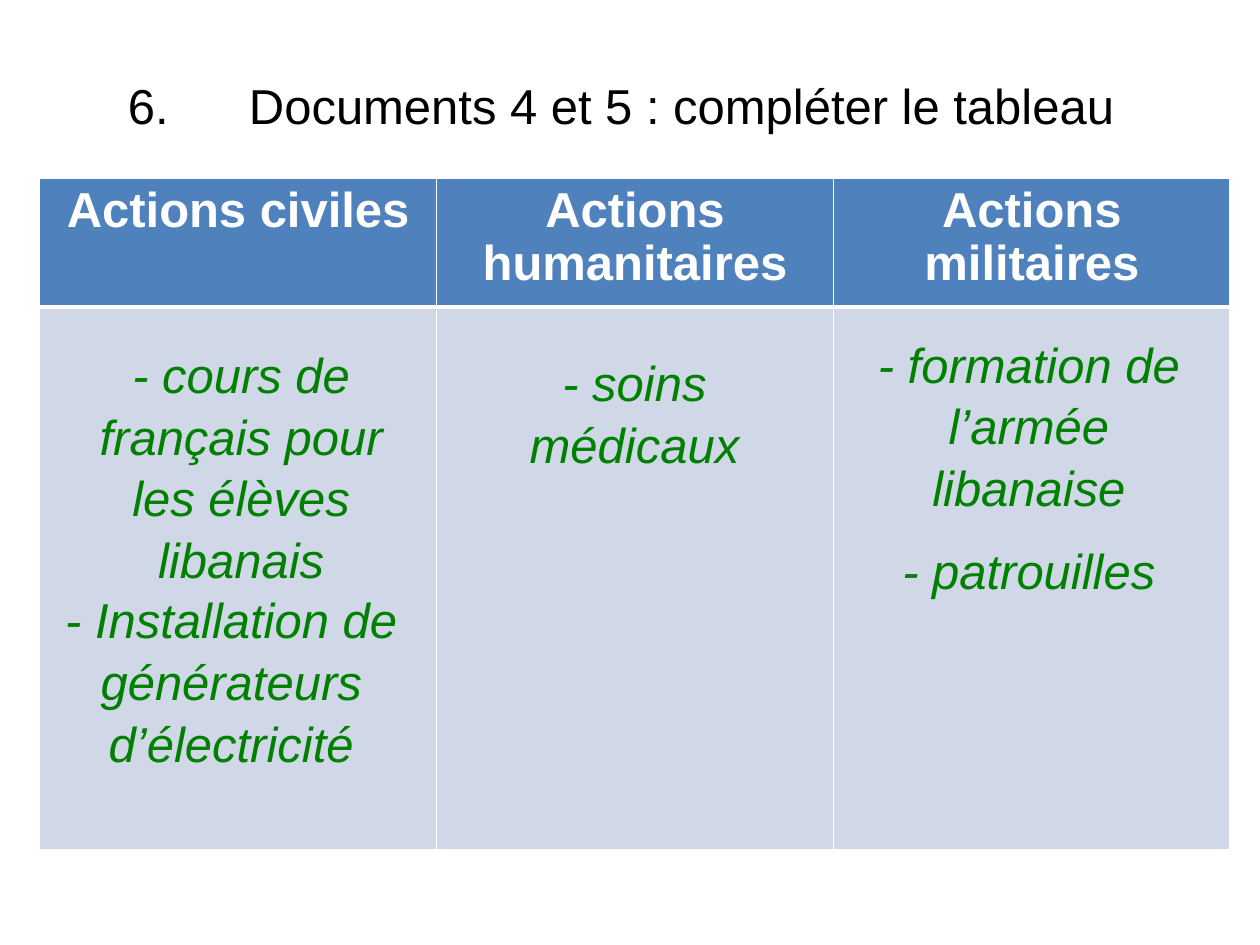
from lxml import etree
from pptx import Presentation
from pptx.dml.color import RGBColor
from pptx.enum.text import MSO_ANCHOR, PP_ALIGN
from pptx.oxml.ns import qn
from pptx.util import Cm, Pt

CENTER, LEFT = PP_ALIGN.CENTER, PP_ALIGN.LEFT
TOP = MSO_ANCHOR.TOP
BLANK_LAYOUT = 6

TITLE_FORMAT = {"name": "Arial", "size": Pt(28)}
HEADER_FORMAT = {**TITLE_FORMAT, "bold": True}
ANSWER_FORMAT = {**TITLE_FORMAT, "bold": False, "italic": True}

HEADERS = ["Actions civiles", "Actions humanitaires", "Actions militaires"]
ANSWERS = [  # text, left, top, height in cm
    ("- cours de français pour les élèves libanais", 1.19, 6.76, 3.84),
    ("- Installation de générateurs d’électricité", 0.99, 11.71, 3.84),
    ("- soins médicaux", 9.12, 6.93, 1.45),
    ("- formation de l’armée libanaise", 17.07, 6.55, 2.64),
    ("- patrouilles", 17.07, 10.72, 1.45),
]


def color(value):
    return RGBColor.from_string(value)


class SlideBuilder:
    black, white, green = "000000", "FFFFFF", "008000"
    header_fill, body_fill = "4F81BD", "D0D8E8"

    def __init__(self, slide):
        self.slide = slide

    def add_text(self, paragraph, text, formats, text_color, align=CENTER, spacing=1.0):
        paragraph.alignment = align
        paragraph.line_spacing = spacing
        run = paragraph.add_run()
        run.text = text
        for attribute, value in formats.items():
            setattr(run.font, attribute, value)
        run.font.color.rgb = color(text_color)

    def text_box(self, left, top, width, height):
        shape = self.slide.shapes.add_textbox(Cm(left), Cm(top), Cm(width), Cm(height))
        shape.text_frame.word_wrap = True
        return shape.text_frame.paragraphs[0]

    def title(self, text):
        paragraph = self.text_box(0, 1.4, 25.4, 1.45)
        # The hanging indent places the wording after the number
        properties = paragraph._p.get_or_add_pPr()
        properties.set("marL", str(Cm(4.77)))
        properties.set("indent", str(Cm(-2.44)))
        self.add_text(paragraph, text, TITLE_FORMAT, self.black, LEFT)

    def answer(self, text, left, top, height):
        paragraph = self.text_box(left, top, 7.34, height)
        self.add_text(paragraph, text, ANSWER_FORMAT, self.green, spacing=1.05)

    def borders(self, cell, widths):
        properties = cell._tc.get_or_add_tcPr()
        for position, (side, width) in enumerate(widths.items()):
            line = etree.Element(qn(f"a:ln{side}"), w=str(Pt(width)))
            fill = etree.SubElement(line, qn("a:solidFill"))
            etree.SubElement(fill, qn("a:srgbClr"), val=self.white)
            properties.insert(position, line)

    def table(self, headers):
        frame = self.slide.shapes.add_table(
            2, len(headers), Cm(0.8), Cm(3.59), Cm(24), Cm(13.53))
        table = frame.table
        for row, height in zip(table.rows, (2.6, 10.93)):
            row.height = Cm(height)
        for column, header in enumerate(headers):
            top_cell, body_cell = table.cell(0, column), table.cell(1, column)
            for cell, fill, top, bottom in (
                (top_cell, self.header_fill, 1, 3),
                (body_cell, self.body_fill, 3, 1),
            ):
                cell.vertical_anchor = TOP
                cell.fill.solid()
                cell.fill.fore_color.rgb = color(fill)
                self.borders(cell, {"L": 1, "R": 1, "T": top, "B": bottom})
            self.add_text(top_cell.text_frame.paragraphs[0], header,
                          HEADER_FORMAT, self.white, spacing=0.98)


def main():
    presentation = Presentation()
    presentation.slide_width, presentation.slide_height = Cm(25.4), Cm(19.05)
    layout = presentation.slide_layouts[BLANK_LAYOUT]
    builder = SlideBuilder(presentation.slides.add_slide(layout))

    # Title and table
    builder.title("6.\tDocuments 4 et 5 : compléter le tableau")
    builder.table(HEADERS)

    # Answers over the body row
    for answer in ANSWERS:
        builder.answer(*answer)

    presentation.save("out.pptx")


if __name__ == "__main__":
    main()
